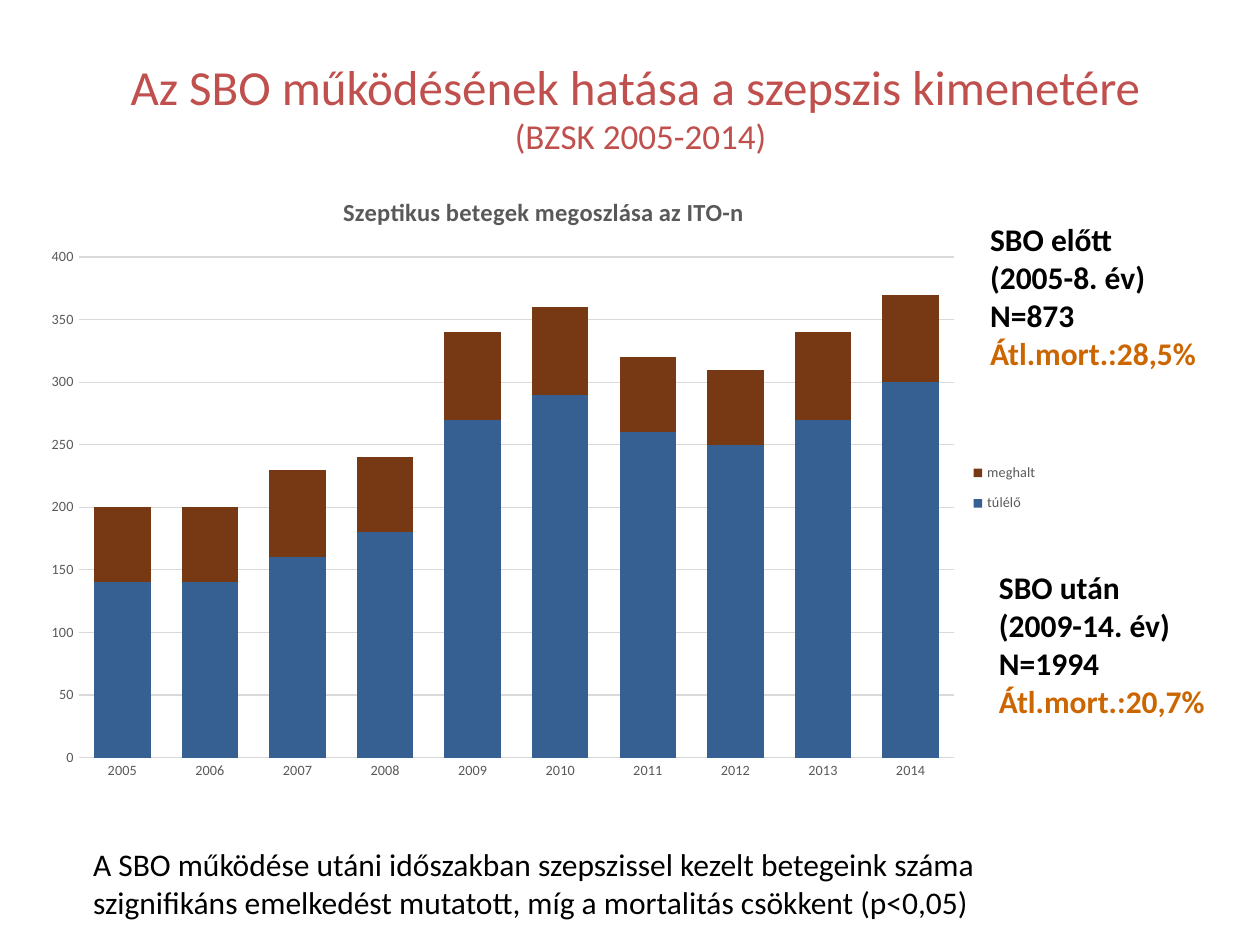
"""Build the slide on sepsis outcomes before and after the SBO opened."""
from lxml import etree
from pptx import Presentation, util as u
from pptx.chart.data import CategoryChartData
from pptx.dml.color import RGBColor
from pptx.enum import chart as ch, text
from pptx.oxml.ns import qn

W, H = 10, 7.5
FONT = "Calibri"
BLACK, GREY, GRID, RED, ORANGE = "000000", "595959", "D9D9D9", "C0504D", "CC6600"

TITLE = [("Az SBO működésének hatása a szepszis kimenetére ", 28), ("(BZSK 2005-2014)", 20)]
CHART_TITLE = "Szeptikus betegek megoszlása az ITO-n"
YEARS = [str(year) for year in range(2005, 2015)]
SERIES = [
    ("túlélő", "376092", (140, 140, 160, 180, 270, 290, 260, 250, 270, 300)),
    ("meghalt", "773913", (60, 60, 70, 60, 70, 70, 60, 60, 70, 70)),
]
CHART_BOX = (0.25, 1.36, 8.13, 4.93)
PLOT_SHARES = (0.046, 0.138, 0.855, 0.806)
LEGEND_SHARES = (0.91, 0.45, 0.08, 0.12)
NOTES = [
    ((7.76, 1.7, 2.13, 1.31), True,
     [("SBO előtt", BLACK), ("(2005-8. év)", BLACK), ("N=873", BLACK),
      ("Átl.mort.:28,5%", ORANGE)]),
    ((7.83, 4.46, 2.05, 1.55), True,
     [("SBO után", BLACK), ("(2009-14. év)", BLACK), ("N=1994", BLACK),
      ("Átl.mort.:20,7%", ORANGE)]),
    ((0.64, 6.66, 7.33, 0.71), False,
     [("A SBO működése utáni időszakban szepszissel kezelt betegeink száma", BLACK),
      ("szignifikáns emelkedést mutatott, míg a mortalitás csökkent (p<0,05)", BLACK)]),
]


def rgb(value):
    """Turn a hex string into a colour."""
    return RGBColor.from_string(value)


def inches(box):
    """Convert a box of numbers to lengths."""
    return [u.Inches(v) for v in box]


def style(font, size, color, bold=False):
    """Set typeface, size, colour and weight."""
    font.name, font.size, font.bold = FONT, u.Pt(size), bold
    font.color.rgb = rgb(color)


def add_title(s):
    """Fill the title placeholder with two centred lines."""
    sp = s.shapes.title
    sp.left, sp.top, sp.width, sp.height = inches((0.28, 0.3, 9.61, 1.09))
    tf = sp.text_frame
    tf.vertical_anchor = text.MSO_ANCHOR.MIDDLE
    p = tf.paragraphs[0]
    p.alignment = text.PP_ALIGN.CENTER
    for i, (line, size) in enumerate(TITLE):
        if i:
            p.add_line_break()
        r = p.add_run()
        r.text = line
        style(r.font, size, RED)


def place(parent, shares, inner=False):
    """Give a chart part a manual layout in shares of the chart."""
    for old in parent.findall(qn("c:layout")):
        parent.remove(old)
    layout = etree.Element(qn("c:layout"))
    manual = etree.SubElement(layout, qn("c:manualLayout"))
    values = [("xMode", "edge"), ("yMode", "edge"), *zip("xywh", shares)]
    if inner:
        values.insert(0, ("layoutTarget", "inner"))
    for tag, value in values:
        etree.SubElement(manual, qn("c:" + tag)).set("val", str(value))
    parent.insert(0 if inner else 1, layout)


def add_chart(s):
    """Add the stacked columns of survivors and deaths."""
    data = CategoryChartData()
    data.categories = YEARS
    for name, _, values in SERIES:
        data.add_series(name, values)
    chart = s.shapes.add_chart(ch.XL_CHART_TYPE.COLUMN_STACKED, *inches(CHART_BOX), data).chart
    style(chart.font, 10, BLACK)
    chart.has_title = True
    r = chart.chart_title.text_frame.paragraphs[0].add_run()
    r.text = CHART_TITLE
    style(r.font, 14, GREY, True)
    plot = chart.plots[0]
    plot.gap_width, plot.overlap, plot.vary_by_categories = 55, 100, False
    for series, (_, color, _) in zip(plot.series, SERIES):
        series.format.fill.solid()
        series.format.fill.fore_color.rgb = rgb(color)
    cat, val = chart.category_axis, chart.value_axis
    for axis in (cat, val):
        axis.major_tick_mark = axis.minor_tick_mark = ch.XL_TICK_MARK.NONE
        style(axis.tick_labels.font, 8.1, GREY)
    val.minimum_scale, val.maximum_scale, val.major_unit = 0, 400, 50
    val.format.line.fill.background()
    for line, width in ((cat.format.line, 0.9), (val.major_gridlines.format.line, 0.67)):
        line.color.rgb, line.width = rgb(GRID), u.Pt(width)
    chart.has_legend = True
    legend = chart.legend
    legend.position, legend.include_in_layout = ch.XL_LEGEND_POSITION.RIGHT, False
    style(legend.font, 8.1, GREY)
    space = chart.element.chart
    place(space.plotArea, PLOT_SHARES, inner=True)
    place(space.find(qn("c:legend")), LEGEND_SHARES)


def add_note(s, box, bold, lines):
    """Add a text box with one paragraph per line."""
    tf = s.shapes.add_textbox(*inches(box)).text_frame
    tf.word_wrap = bold
    tf.auto_size = text.MSO_AUTO_SIZE.SHAPE_TO_FIT_TEXT
    for i, (line, color) in enumerate(lines):
        p = tf.add_paragraph() if i else tf.paragraphs[0]
        r = p.add_run()
        r.text = line
        style(r.font, 18, color, bold)


def main():
    """Assemble and save the slide."""
    prs = Presentation()
    prs.slide_width, prs.slide_height = inches((W, H))
    s = prs.slides.add_slide(prs.slide_layouts[5])
    add_title(s)
    add_chart(s)
    for note in NOTES:
        add_note(s, *note)
    prs.save("out.pptx")


if __name__ == "__main__":
    main()
